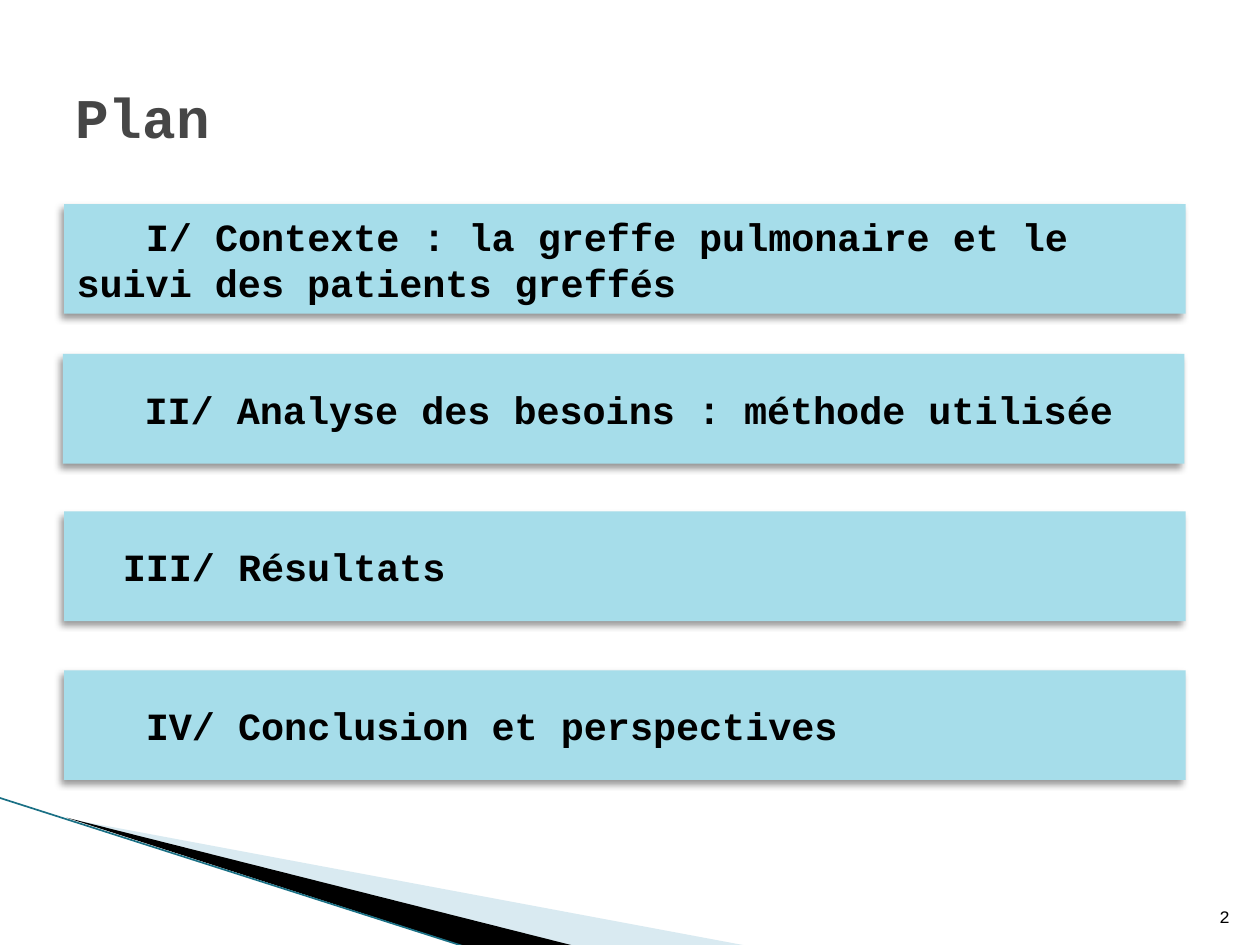
from lxml import etree
from pptx import Presentation
from pptx.dml.color import RGBColor
from pptx.enum.shapes import MSO_CONNECTOR as Connector, MSO_SHAPE as Shape
from pptx.enum.text import MSO_ANCHOR as Anchor, PP_ALIGN as Align
from pptx.oxml.ns import qn
from pptx.util import Inches, Pt

COLORS = {"bar": "A6DDEA", "text": "000000", "title": "464646",
          "pale": "A0CBDC", "dark": "000000", "edge": "1A7085"}
FONT = "Courier New"
CHARACTER = 0.6 * 22 / 72
SECTIONS = [
    (0.51, 1.62, 3, "I/ Contexte : la greffe pulmonaire et le suivi des patients greffés"),
    (0.5, 2.81, 3, "II/ Analyse des besoins : méthode utilisée"),
    (0.51, 4.06, 2, "III/ Résultats"),
    (0.51, 5.32, 3, "IV/ Conclusion et perspectives"),
]
WEDGES = [
    ([(0.55, 6.5), (5.95, 7.51), (4.56, 7.51)], "pale", 40),
    ([(0.53, 6.49), (4.57, 7.51), (3.72, 7.52)], "dark", 100),
]


def color(name):
    return RGBColor.from_string(COLORS[name])


def write(shape, text, size, color_name, anchor, bold=False, align=Align.LEFT):
    frame = shape.text_frame
    frame.word_wrap = True
    frame.vertical_anchor = anchor
    paragraph = frame.paragraphs[0]
    paragraph.text = text
    paragraph.alignment = align
    font = paragraph.font
    font.name, font.size, font.bold = FONT, Pt(size), bold
    font.color.rgb = color(color_name)
    return paragraph


def set_alpha(color_element, percent):
    etree.SubElement(color_element, qn("a:alpha"), val=str(percent * 1000))


def fill_plain(shape, color_name):
    shape.fill.solid()
    shape.fill.fore_color.rgb = color(color_name)
    shape.line.fill.background()
    shape.shadow.inherit = False


def add_shadow(shape):
    effects = shape._element.spPr.find(qn("a:effectLst"))
    shadow = etree.SubElement(effects, qn("a:outerShdw"), blurRad=str(Pt(4)),
                              dist=str(Pt(3)), dir=str(135 * 60000), rotWithShape="0")
    set_alpha(etree.SubElement(shadow, qn("a:srgbClr"), val="000000"), 40)


def add_wedge(slide, points, color_name, opacity):
    start, *rest = [(Inches(x), Inches(y)) for x, y in points]
    builder = slide.shapes.build_freeform(*start)
    builder.add_line_segments(rest, close=True)
    shape = builder.convert_to_shape()
    fill_plain(shape, color_name)
    if opacity < 100:
        set_alpha(shape._element.spPr.find(".//" + qn("a:srgbClr")), opacity)


def add_corner(slide):
    for points, color_name, opacity in WEDGES:
        add_wedge(slide, points, color_name, opacity)
    edge = slide.shapes.add_connector(
        Connector.STRAIGHT, Inches(-0.01), Inches(6.33), Inches(3.71), Inches(7.52))
    edge.line.color.rgb = color("edge")
    edge.line.width = Pt(0.95)
    etree.SubElement(edge._element.spPr, qn("a:effectLst"))


def add_label(slide, box, *args, **kwargs):
    shape = slide.shapes.add_textbox(*map(Inches, box))
    write(shape, *args, **kwargs)


def add_section(slide, box, indent, text):
    bar = slide.shapes.add_shape(Shape.RECTANGLE, *map(Inches, box))
    fill_plain(bar, "bar")
    add_shadow(bar)
    paragraph = write(bar, text, 22, "text", Anchor.MIDDLE, bold=True)
    paragraph._p.get_or_add_pPr().set("indent", str(Inches(indent * CHARACTER)))


def main():
    presentation = Presentation()
    presentation.slide_width, presentation.slide_height = Inches(10), Inches(7.5)
    slide = presentation.slides.add_slide(presentation.slide_layouts[6])
    add_corner(slide)
    add_label(slide, (9.46, 7.01, 0.4, 0.4), "2", 10, "text", Anchor.BOTTOM, align=Align.RIGHT)
    add_label(slide, (0.5, 0.3, 9, 1.25), "Plan", 32, "title", Anchor.MIDDLE, bold=True)
    for left, top, indent, text in SECTIONS:
        add_section(slide, (left, top, 8.9, 0.87), indent, text)
    presentation.save("out.pptx")


if __name__ == "__main__":
    main()
